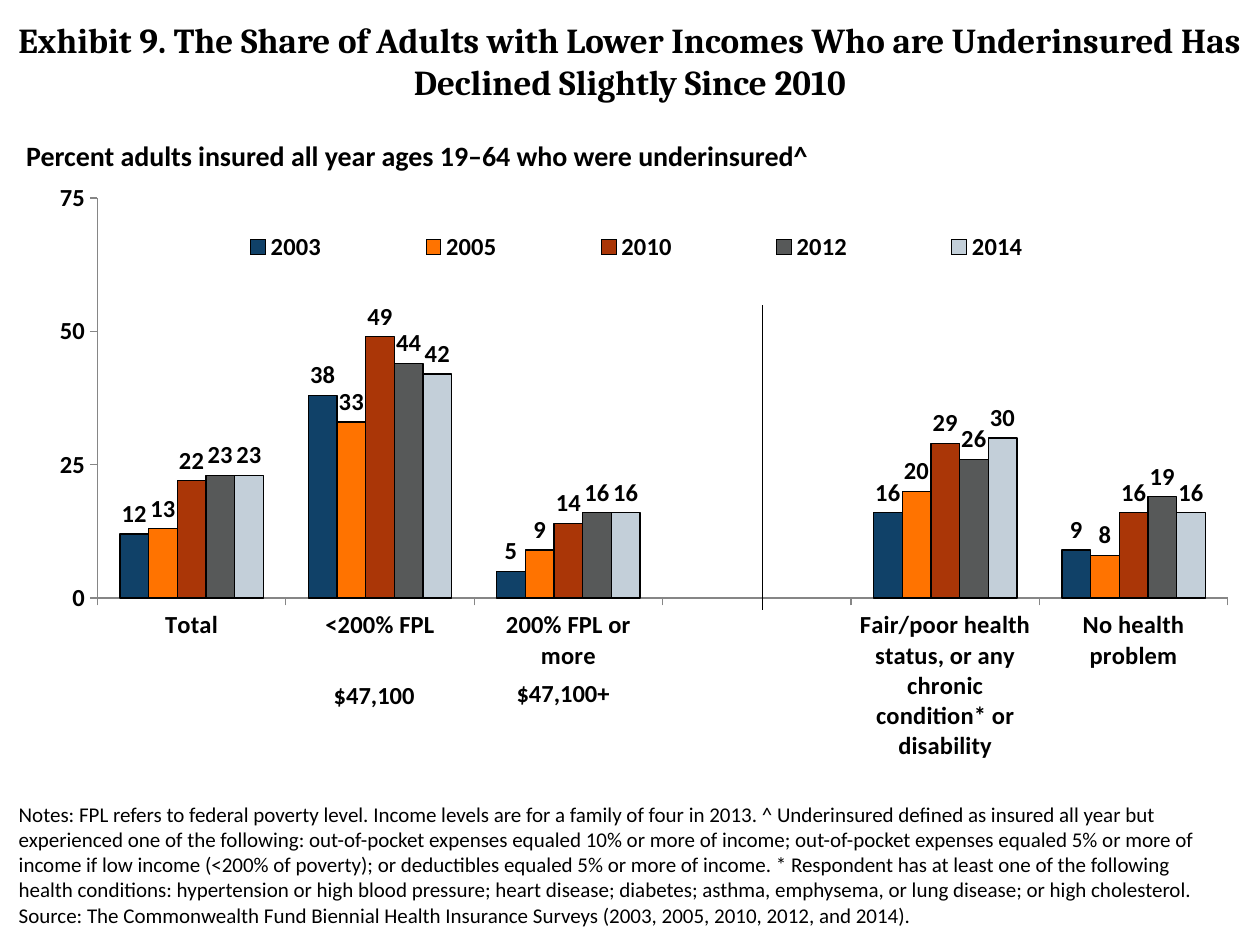
from lxml import etree
from pptx import Presentation
from pptx.chart.data import CategoryChartData
from pptx.dml.color import RGBColor
from pptx.enum.chart import XL_CHART_TYPE, XL_LABEL_POSITION, XL_LEGEND_POSITION, XL_TICK_MARK
from pptx.enum.shapes import MSO_CONNECTOR
from pptx.enum.text import MSO_AUTO_SIZE, PP_ALIGN
from pptx.oxml import parse_xml
from pptx.oxml.ns import nsdecls, qn
from pptx.util import Pt

PX = 9144  # EMU in one px, 100 px to the inch
BLACK = RGBColor(0x00, 0x00, 0x00)
GRAY = RGBColor(0x86, 0x86, 0x86)
NAVY = RGBColor(0x10, 0x41, 0x68)
ORANGE = RGBColor(0xFF, 0x73, 0x00)
RUST = RGBColor(0xAA, 0x36, 0x07)
SLATE = RGBColor(0x57, 0x59, 0x59)
CENTER, LEFT = PP_ALIGN.CENTER, PP_ALIGN.LEFT
COLUMN = XL_CHART_TYPE.COLUMN_CLUSTERED
OUT_END = XL_LABEL_POSITION.OUTSIDE_END
TOP = XL_LEGEND_POSITION.TOP
OUTSIDE = XL_TICK_MARK.OUTSIDE
GROW = MSO_AUTO_SIZE.SHAPE_TO_FIT_TEXT
STRAIGHT = MSO_CONNECTOR.STRAIGHT

TITLE = ("Exhibit 9. The Share of Adults with Lower Incomes Who are "
         "Underinsured Has Declined Slightly Since 2010")
METRIC = "Percent adults insured all year ages 19–64 who were underinsured^"
NOTES = (
    "Notes: FPL refers to federal poverty level. Income levels are for a family of four in 2013. "
    "^ Underinsured defined as insured all year but experienced one of the following: "
    "out-of-pocket expenses equaled 10% or more of income; out-of-pocket expenses equaled 5% or "
    "more of income if low income (<200% of poverty); or deductibles equaled 5% or more of income. "
    "* Respondent has at least one of the following health conditions: hypertension or high blood "
    "pressure; heart disease; diabetes; asthma, emphysema, or lung disease; or high cholesterol.\n"
    "Source: The Commonwealth Fund Biennial Health Insurance Surveys "
    "(2003, 2005, 2010, 2012, and 2014).")
GROUPS = ["Total", "<200% FPL", "200% FPL or more", "",
          "Fair/poor health status, or any chronic condition* or disability",
          "No health problem"]
YEARS = [
    ("2003", NAVY, [12, 38, 5, None, 16, 9]),
    ("2005", ORANGE, [13, 33, 9, None, 20, 8]),
    ("2010", RUST, [22, 49, 14, None, 29, 16]),
    ("2012", SLATE, [23, 44, 16, None, 26, 19]),
    ("2014", NAVY, [23, 42, 16, None, 30, 16]),
]


def scale(*sizes):
    return [size * PX for size in sizes]


def set_font(font, size, name="Calibri", bold=True):
    font.name, font.size, font.bold = name, Pt(size), bold
    font.color.rgb = BLACK


def add_text(slide, box, text, size, align=LEFT, name="Calibri", bold=True):
    frame = slide.shapes.add_textbox(*scale(*box)).text_frame
    frame.word_wrap = True
    frame.auto_size = GROW
    frame.text = text
    for para in frame.paragraphs:
        para.alignment = align
        for run in para.runs:
            set_font(run.font, size, name, bold)


def set_place(parent, index, box, inner=False):
    """Fix a chart part at fractions (x, y, w, h) of the chart."""
    for old in parent.findall(qn("c:layout")):
        parent.remove(old)
    target = '<c:layoutTarget val="inner"/>' if inner else ""
    modes = '<c:xMode val="edge"/><c:yMode val="edge"/>'
    sizes = "".join(f'<c:{key} val="{val}"/>' for key, val in zip("xywh", box))
    parent.insert(index, parse_xml(
        f'<c:layout {nsdecls("c")}><c:manualLayout>{target}{modes}{sizes}'
        "</c:manualLayout></c:layout>"))


def style_axes(chart):
    value, group = chart.value_axis, chart.category_axis
    value.minimum_scale, value.maximum_scale, value.major_unit = 0, 75, 25
    value.has_major_gridlines = False
    for axis in (value, group):
        axis.major_tick_mark = OUTSIDE
        axis.format.line.color.rgb = GRAY
        axis.format.line.width = Pt(0.75)


def style_bars(plot):
    plot.gap_width, plot.overlap = 157, 0
    plot.vary_by_categories = False
    for series, (_, color, _) in zip(plot.series, YEARS):
        series.invert_if_negative = False
        look = series.format
        look.fill.solid()
        look.fill.fore_color.rgb = color
        look.line.color.rgb = BLACK
        look.line.width = Pt(0.75)
        labels = series.data_labels
        labels.show_value = True
        labels.position = OUT_END
        labels.number_format, labels.number_format_is_linked = "0", False
    # The last year is a 25% tint of the first
    tint = look.fill.fore_color._xFill.find(qn("a:srgbClr"))
    etree.SubElement(tint, qn("a:alpha")).set("val", "25000")


def add_bars(slide, box):
    data = CategoryChartData()
    data.categories = GROUPS
    for year, _, values in YEARS:
        data.add_series(year, values)
    chart = slide.shapes.add_chart(COLUMN, *scale(*box), data).chart
    chart.has_title = False
    set_font(chart.font, 14)
    style_axes(chart)
    style_bars(chart.plots[0])
    chart.has_legend = True
    chart.legend.position = TOP
    chart.legend.include_in_layout = False
    area = chart._chartSpace.chart.plotArea
    set_place(area, 0, (0.063, 0.066, 0.937, 0.649), inner=True)
    set_place(chart.legend._element, 1, (0.11, 0.11, 0.8, 0.07))


def add_rule(slide, x, top, bottom):
    line = slide.shapes.add_connector(STRAIGHT, *scale(x, bottom, x, top))
    line.line.color.rgb = BLACK
    line.line.width = Pt(0.75)
    etree.SubElement(line._element.spPr, qn("a:effectLst"))


def add_panel(slide, box):
    """Chart with its heading, income levels and dividing rule."""
    x, y, _, _ = box
    add_bars(slide, box)
    add_text(slide, (x - 6, y - 20, 747, 37), METRIC, 16)
    add_text(slide, (x + 191, y + 410, 178, 34), "$47,100", 14, CENTER)
    add_text(slide, (x + 341, y + 408, 178, 34), "$47,100+", 14, CENTER)
    add_rule(slide, x + 588, y + 117, y + 359)


def main():
    deck = Presentation()
    deck.slide_width, deck.slide_height = scale(1000, 750)
    slide = deck.slides.add_slide(deck.slide_layouts[6])
    add_panel(slide, (17, 125, 958, 489))
    add_text(slide, (0, 10, 1000, 77), TITLE, 20, CENTER, "Cambria")
    add_text(slide, (5, 631, 958, 111), NOTES, 12, bold=False)
    deck.save("out.pptx")


if __name__ == "__main__":
    main()
